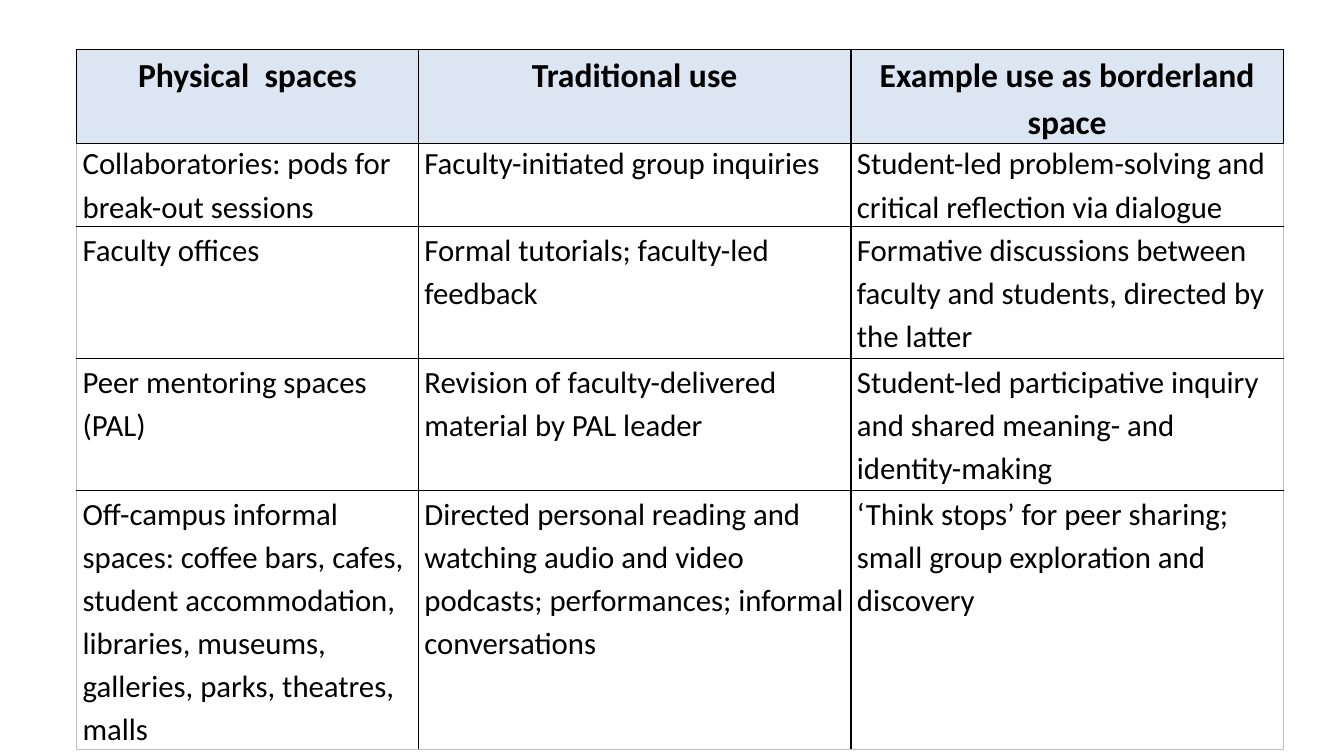
from dataclasses import dataclass

import pptx
import pptx.dml.color
import pptx.enum.text
import pptx.oxml
import pptx.oxml.ns
import pptx.slide
import pptx.table
import pptx.util

Inches = pptx.util.Inches
Pt = pptx.util.Pt
RGBColor = pptx.dml.color.RGBColor
PP_ALIGN = pptx.enum.text.PP_ALIGN


@dataclass(frozen=True)
class Theme:
    font: str = "Calibri"
    text: str = "000000"
    rule: str = "000000"
    outer_rule: str = "BFBFBF"
    header_fill: str = "DCE6F2"
    header_size: int = 24
    body_size: int = 22
    rule_width: int = 1
    line_spacing: float = 1.15


@dataclass(frozen=True)
class Grid:
    top: float
    row_heights: list[float]
    rows: list[tuple[str, str, str]]
    size: int
    side_margin: float
    outer_rule: str
    align: PP_ALIGN = PP_ALIGN.LEFT
    bold: bool = False
    fill: str | None = None


THEME = Theme()
LEFT = 0.76
COLUMN_WIDTHS = [3.39, 4.29, 4.29]

HEADER = Grid(
    top=0.49,
    row_heights=[0.87],
    rows=[("Physical  spaces", "Traditional use", "Example use as borderland space")],
    size=THEME.header_size,
    side_margin=0.05,
    outer_rule=THEME.rule,
    align=PP_ALIGN.CENTER,
    bold=True,
    fill=THEME.header_fill,
)

BODY = Grid(
    top=1.39,
    row_heights=[0.86, 1.31, 1.31, 2.2],
    rows=[
        (
            "Collaboratories: pods for break-out sessions",
            "Faculty-initiated group inquiries",
            "Student-led problem-solving and critical reflection via dialogue",
        ),
        (
            "Faculty offices",
            "Formal tutorials; faculty-led feedback",
            "Formative discussions between faculty and students, directed by the latter",
        ),
        (
            "Peer mentoring spaces (PAL)",
            "Revision of faculty-delivered material by PAL leader",
            "Student-led participative inquiry and shared meaning- and identity-making",
        ),
        (
            "Off-campus informal spaces: coffee bars, cafes, student accommodation, "
            "libraries, museums, galleries, parks, theatres, malls",
            "Directed personal reading and watching audio and video podcasts; "
            "performances; informal conversations",
            "‘Think stops’ for peer sharing; small group exploration and discovery",
        ),
    ],
    size=THEME.body_size,
    side_margin=0.06,
    outer_rule=THEME.outer_rule,
)


def add_border(cell: pptx.table._Cell, side: str, color: str) -> None:
    """Draw one cell edge; side is L, R, T or B."""
    line = pptx.oxml.parse_xml(
        f'<a:ln{side} {pptx.oxml.ns.nsdecls("a")} w="{Pt(THEME.rule_width)}">'
        f'<a:solidFill><a:srgbClr val="{color}"/></a:solidFill></a:ln{side}>'
    )
    cell._tc.get_or_add_tcPr().append(line)


def format_cell(cell: pptx.table._Cell, text: str, grid: Grid) -> None:
    cell.margin_left = cell.margin_right = Inches(grid.side_margin)
    cell.margin_top = cell.margin_bottom = 0
    if grid.fill:
        cell.fill.solid()
        cell.fill.fore_color.rgb = RGBColor.from_string(grid.fill)
    else:
        cell.fill.background()

    cell.text_frame.text = text
    paragraph = cell.text_frame.paragraphs[0]
    paragraph.alignment = grid.align
    paragraph.line_spacing = THEME.line_spacing
    font = paragraph.runs[0].font
    font.name = THEME.font
    font.size = Pt(grid.size)
    font.bold = grid.bold
    font.color.rgb = RGBColor.from_string(THEME.text)


def add_grid(slide: pptx.slide.Slide, grid: Grid) -> None:
    table = slide.shapes.add_table(
        len(grid.rows),
        len(COLUMN_WIDTHS),
        Inches(LEFT),
        Inches(grid.top),
        Inches(sum(COLUMN_WIDTHS)),
        Inches(sum(grid.row_heights)),
    ).table
    table.first_row = False
    table.horz_banding = False
    for column, width in zip(table.columns, COLUMN_WIDTHS):
        column.width = Inches(width)
    for row, height in zip(table.rows, grid.row_heights):
        row.height = Inches(height)

    last_row, last_column = len(grid.rows) - 1, len(COLUMN_WIDTHS) - 1
    for r, texts in enumerate(grid.rows):
        for c, text in enumerate(texts):
            cell = table.cell(r, c)
            is_outer = {
                "L": c == 0,
                "R": c == last_column,
                "T": r == 0,
                "B": r == last_row,
            }
            for side, outer in is_outer.items():
                add_border(cell, side, grid.outer_rule if outer else THEME.rule)
            format_cell(cell, text, grid)


def main() -> None:
    presentation = pptx.Presentation()
    presentation.slide_width = Inches(13.33)
    presentation.slide_height = Inches(7.5)
    slide = presentation.slides.add_slide(presentation.slide_layouts.get_by_name("Blank"))
    for grid in (BODY, HEADER):
        add_grid(slide, grid)
    presentation.save("out.pptx")


if __name__ == "__main__":
    main()
